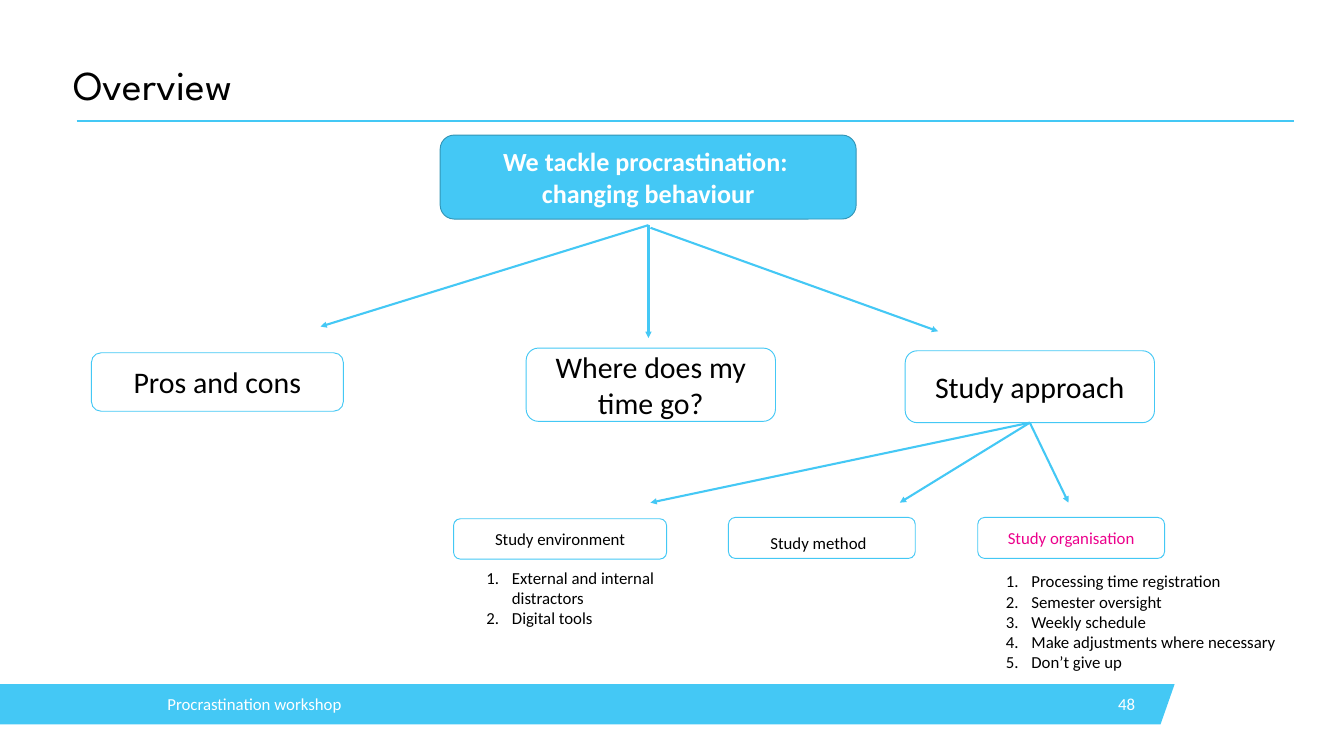
from pptx import Presentation
from pptx.dml.color import RGBColor
from pptx.enum.shapes import MSO_CONNECTOR, MSO_SHAPE
from pptx.enum.text import MSO_ANCHOR, PP_ALIGN
from pptx.oxml.ns import qn
from pptx.util import Pt
from lxml.etree import SubElement

PX = 9144
CYAN, WHITE, BLACK, PINK = "44C8F5", "FFFFFF", "000000", "EC008C"


def px(*values):
    return [round(v * PX) for v in values]


def color(value):
    return RGBColor.from_string(value)


def add_run(p, text, size, fill=BLACK, bold=False, font="Calibri"):
    r = p.add_run()
    r.text = text
    r.font.name = font
    r.font.size = Pt(size)
    r.font.bold = bold
    r.font.color.rgb = color(fill)


def number(p):
    pPr = p._p.get_or_add_pPr()
    pPr.set("marL", str(38 * PX))
    pPr.set("indent", str(-38 * PX))
    SubElement(pPr, qn("a:buFont"), typeface="+mj-lt")
    SubElement(pPr, qn("a:buAutoNum"), type="arabicPeriod")


def write(s, lines, align=PP_ALIGN.LEFT, anchor=MSO_ANCHOR.MIDDLE,
          inset=None, numbered=False, spacing=None, **font):
    tf = s.text_frame
    tf.word_wrap = True
    tf.vertical_anchor = anchor
    if inset is not None:
        tf.margin_left = tf.margin_right = tf.margin_top = tf.margin_bottom = inset
    for i, line in enumerate(lines):
        p = tf.add_paragraph() if i else tf.paragraphs[0]
        p.alignment = align
        if spacing:
            p.line_spacing = spacing
        if numbered:
            number(p)
        add_run(p, line, **font)


def add_text(slide, box, lines, **fmt):
    write(slide.shapes.add_textbox(*px(*box)), lines, **fmt)


def add_list(slide, box, items):
    add_text(slide, box, items, numbered=True, anchor=MSO_ANCHOR.TOP, size=18)


def add_box(slide, box, lines, shape=MSO_SHAPE.ROUNDED_RECTANGLE,
            back=WHITE, border=CYAN, **font):
    s = slide.shapes.add_shape(shape, *px(*box))
    s.shadow.inherit = False
    s.fill.solid()
    s.fill.fore_color.rgb = color(back)
    s.line.color.rgb = color(border)
    s.line.width = Pt(1)
    write(s, lines, align=PP_ALIGN.CENTER, **font)
    return s


def add_line(slide, start, end, arrow=True, source=None):
    c = slide.shapes.add_connector(MSO_CONNECTOR.STRAIGHT, *px(*start, *end))
    if source is not None:
        c.begin_connect(source, 2)
    c.line.color.rgb = color(CYAN)
    c.line.width = Pt(2.25)
    if arrow:
        SubElement(c.line._get_or_add_ln(), qn("a:tailEnd"), type="triangle")
    SubElement(c._element.spPr, qn("a:effectLst"))


def add_footer(slide):
    builder = slide.shapes.build_freeform(0, 1018, scale=PX)
    builder.add_line_segments([(1748, 1018), (1727, 1078), (0, 1078)])
    bar = builder.convert_to_shape()
    bar.shadow.inherit = False
    bar.fill.solid()
    bar.fill.fore_color.rgb = color(CYAN)
    bar.line.fill.background()
    add_text(slide, (249, 1018, 675, 60), ["Procrastination workshop"],
             inset=0, size=18, fill=WHITE)
    add_text(slide, (1590, 1018, 109, 60), ["48"],
             align=PP_ALIGN.RIGHT, size=18, fill=WHITE)


def add_title(slide, text):
    title = slide.shapes.title
    title.left, title.top, title.width, title.height = px(109, 97, 1813, 69)
    write(title, [text], anchor=MSO_ANCHOR.TOP, inset=0, spacing=0.9,
          size=44, font="League Spartan")
    add_line(slide, (114, 180), (1925, 180), arrow=False)


def add_topics(slide):
    add_box(slide, (655, 201, 619, 125),
            ["We tackle procrastination: ", "changing behaviour"],
            shape=MSO_SHAPE.FLOWCHART_ALTERNATE_PROCESS, back=CYAN,
            border="3294B5", size=28, fill=WHITE, bold=True)
    for start, end in (((965, 335), (477, 486)),
                       ((965, 335), (965, 503)),
                       ((968, 339), (1396, 493))):
        add_line(slide, start, end)
    add_box(slide, (136, 525, 375, 87), ["Pros and cons"], size=32)
    add_box(slide, (783, 518, 371, 109), ["Where does my time go?"], size=32)
    return add_box(slide, (1347, 522, 371, 107), ["Study approach"], size=32)


def add_study_parts(slide, approach):
    for x in (968, 1339, 1590):
        add_line(slide, (1532, 629), (x, 748), source=approach)
    add_box(slide, (675, 772, 317, 60), ["Study environment"], size=18)
    method = add_box(slide, (1084, 770, 278, 61), ["Study method"], size=18)
    add_run(method.text_frame.paragraphs[0], " ", 32)
    add_box(slide, (1455, 770, 278, 61), ["Study organisation"], size=18, fill=PINK)
    add_list(slide, (714, 840, 317, 101),
             ["External and internal distractors", "Digital tools"])
    add_list(slide, (1487, 845, 435, 162),
             ["Processing time registration", "Semester oversight",
              "Weekly schedule", "Make adjustments where necessary",
              "Don’t give up"])


def main():
    prs = Presentation()
    prs.slide_width, prs.slide_height = px(2000, 1125)
    slide = prs.slides.add_slide(prs.slide_layouts[5])
    add_footer(slide)
    add_title(slide, "Overview")
    approach = add_topics(slide)
    add_study_parts(slide, approach)
    prs.save("out.pptx")


if __name__ == "__main__":
    main()
